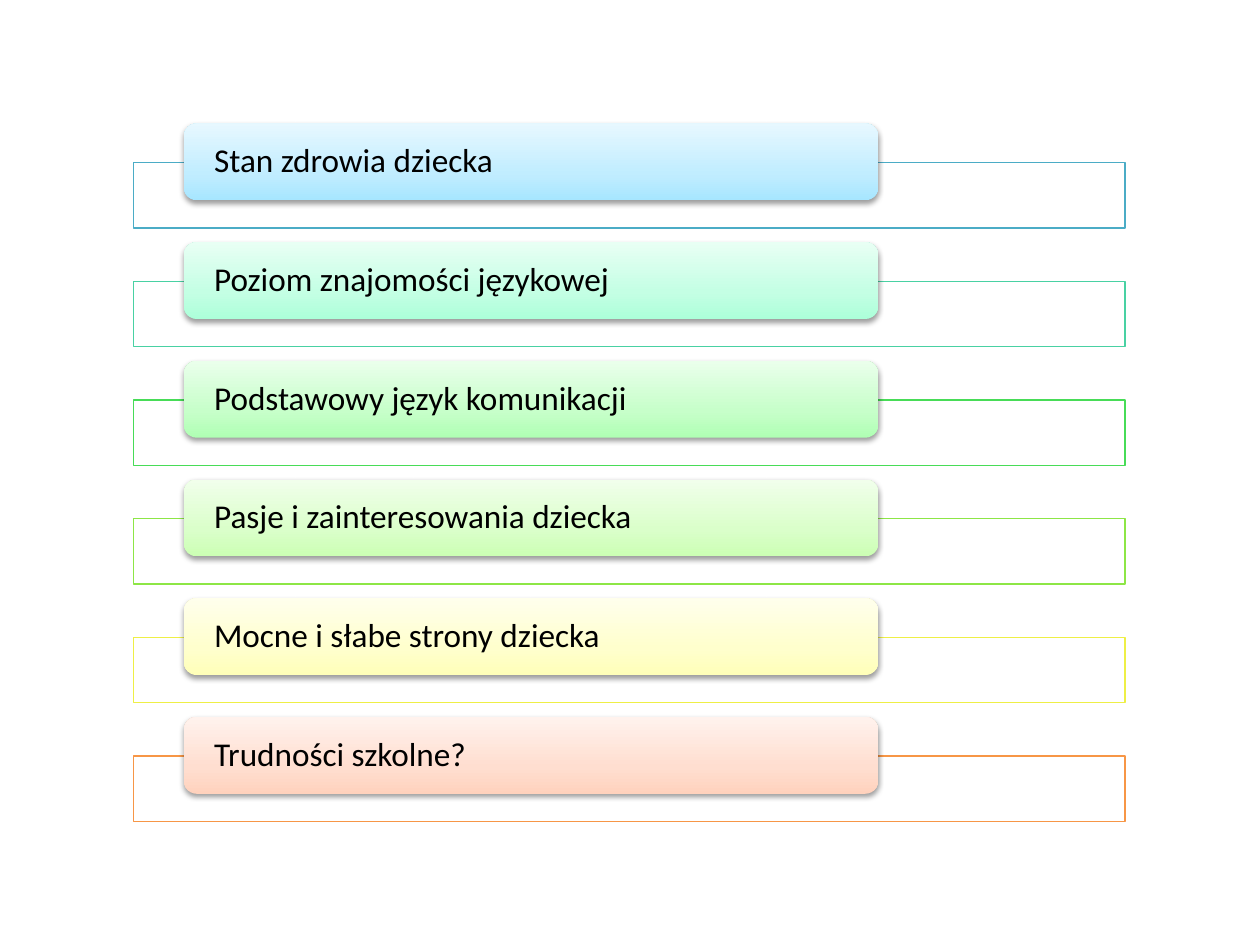
from lxml.etree import SubElement
from pptx import Presentation
from pptx.dml.color import RGBColor
from pptx.enum.shapes import MSO_SHAPE as Shape
from pptx.enum.text import MSO_ANCHOR as Anchor, PP_ALIGN as Align
from pptx.oxml.ns import qn
from pptx.util import Inches, Pt

BLACK, WHITE = "000000", "FFFFFF"
FRAME_LEFT, FRAME_TOP, FRAME_WIDTH, FRAME_HEIGHT = 1.06, 1.29, 7.87, 0.52
LABEL_LEFT, LABEL_TOP, LABEL_WIDTH, LABEL_HEIGHT = 1.46, 0.98, 5.51, 0.61
ROW_STEP = 0.942
STOPS = (0, 35, 100)

# Text, frame line, label gradient from bottom to top
TOPICS = [
    ("Stan zdrowia dziecka", "4BACC6", ("A7E6FF", "C1EDFF", "E7F8FF")),
    ("Poziom znajomości językowej", "49D1A3", ("ACFFD9", "C4FFE4", "E8FFF4")),
    ("Podstawowy język komunikacji", "47DC57", ("B0FFB4", "C7FFCA", "EAFFEB")),
    ("Pasje i zainteresowania dziecka", "8DE646", ("CCFFB4", "DAFFCA", "F1FFEB")),
    ("Mocne i słabe strony dziecka", "EEEF46", ("FFFFB9", "FFFFCD", "FFFFEC")),
    ("Trudności szkolne?", "F79646", ("FFD2BD", "FFDED0", "FFF2ED")),
]


def color(value):
    return RGBColor.from_string(value)


def add_shape(slide, kind, *box):
    shape = slide.shapes.add_shape(kind, *map(Inches, box))
    shape.shadow.inherit = False
    return shape


def add_alpha(color_element, percent):
    SubElement(color_element, qn("a:alpha"), val=str(percent * 1000))


def set_gradient(shape, colors):
    shape.fill.gradient()
    shape.fill.gradient_angle = 90
    stops = shape._element.spPr.find(".//" + qn("a:gsLst"))
    for stop in list(stops):
        stops.remove(stop)
    for position, value in zip(STOPS, colors):
        stop = SubElement(stops, qn("a:gs"), pos=str(position * 1000))
        SubElement(stop, qn("a:srgbClr"), val=value)


def set_shadow(shape):
    effects = shape._element.spPr.find(qn("a:effectLst"))
    shadow = SubElement(effects, qn("a:outerShdw"), blurRad=str(Pt(3.1)),
                        dist=str(Pt(1.6)), dir="5400000", rotWithShape="0")
    add_alpha(SubElement(shadow, qn("a:srgbClr"), val=BLACK), 38)


def add_frame(slide, top, line_color):
    frame = add_shape(slide, Shape.RECTANGLE,
                      FRAME_LEFT, top, FRAME_WIDTH, FRAME_HEIGHT)
    frame.fill.solid()
    frame.fill.fore_color.rgb = color(WHITE)
    add_alpha(frame._element.spPr.find(qn("a:solidFill"))[0], 90)
    frame.line.color.rgb = color(line_color)
    frame.line.width = Pt(0.75)


def add_label(slide, top, text, colors):
    label = add_shape(slide, Shape.ROUNDED_RECTANGLE,
                      LABEL_LEFT, top, LABEL_WIDTH, LABEL_HEIGHT)
    set_gradient(label, colors)
    label.line.fill.background()
    set_shadow(label)
    text_frame = label.text_frame
    text_frame.word_wrap = True
    text_frame.vertical_anchor = Anchor.MIDDLE
    text_frame.margin_left = text_frame.margin_right = Inches(0.21)
    text_frame.margin_top = text_frame.margin_bottom = 0
    paragraph = text_frame.paragraphs[0]
    paragraph.alignment = Align.LEFT
    paragraph.line_spacing = 0.9
    run = paragraph.add_run()
    run.text = text
    run.font.name = "Calibri"
    run.font.size = Pt(19)
    run.font.color.rgb = color(BLACK)


def main():
    presentation = Presentation()
    presentation.slide_width, presentation.slide_height = Inches(10), Inches(7.5)
    slide = presentation.slides.add_slide(presentation.slide_layouts[6])
    for row, (text, line_color, colors) in enumerate(TOPICS):
        offset = row * ROW_STEP
        add_frame(slide, FRAME_TOP + offset, line_color)
        add_label(slide, LABEL_TOP + offset, text, colors)
    presentation.save("out.pptx")


if __name__ == "__main__":
    main()
